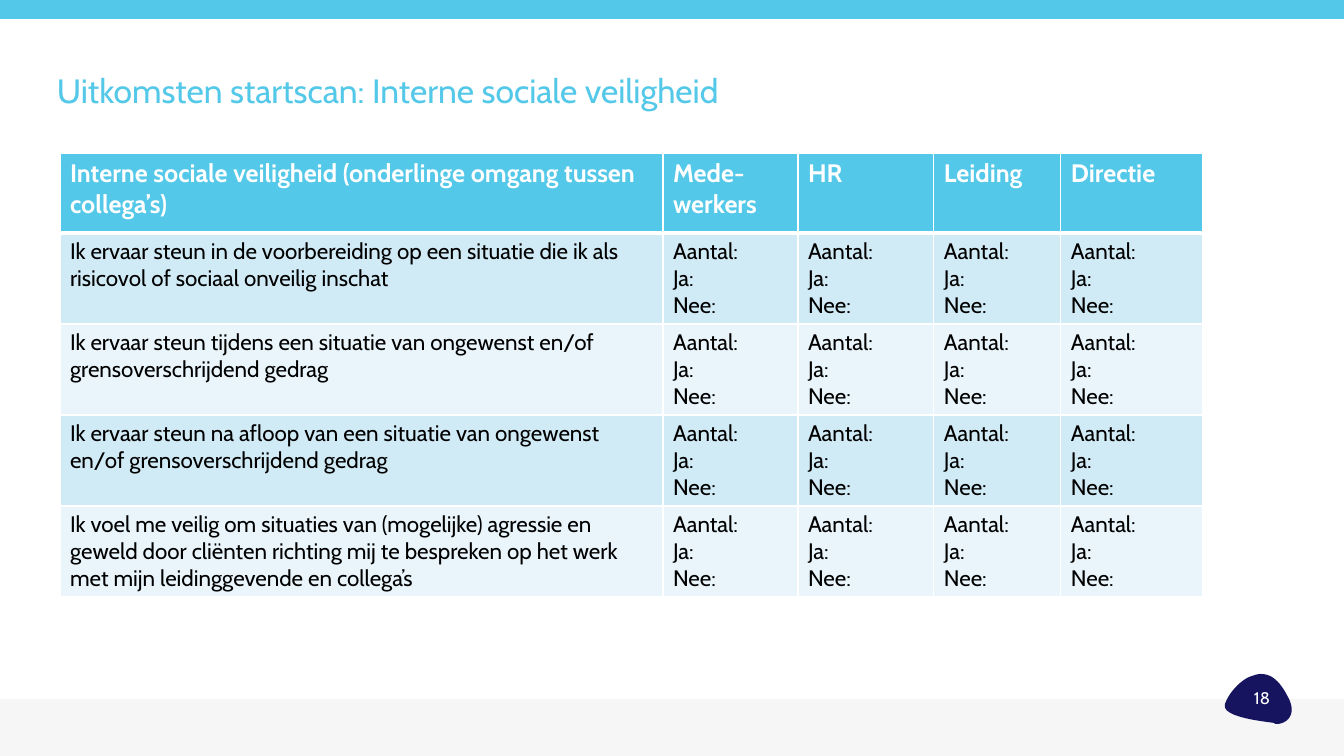
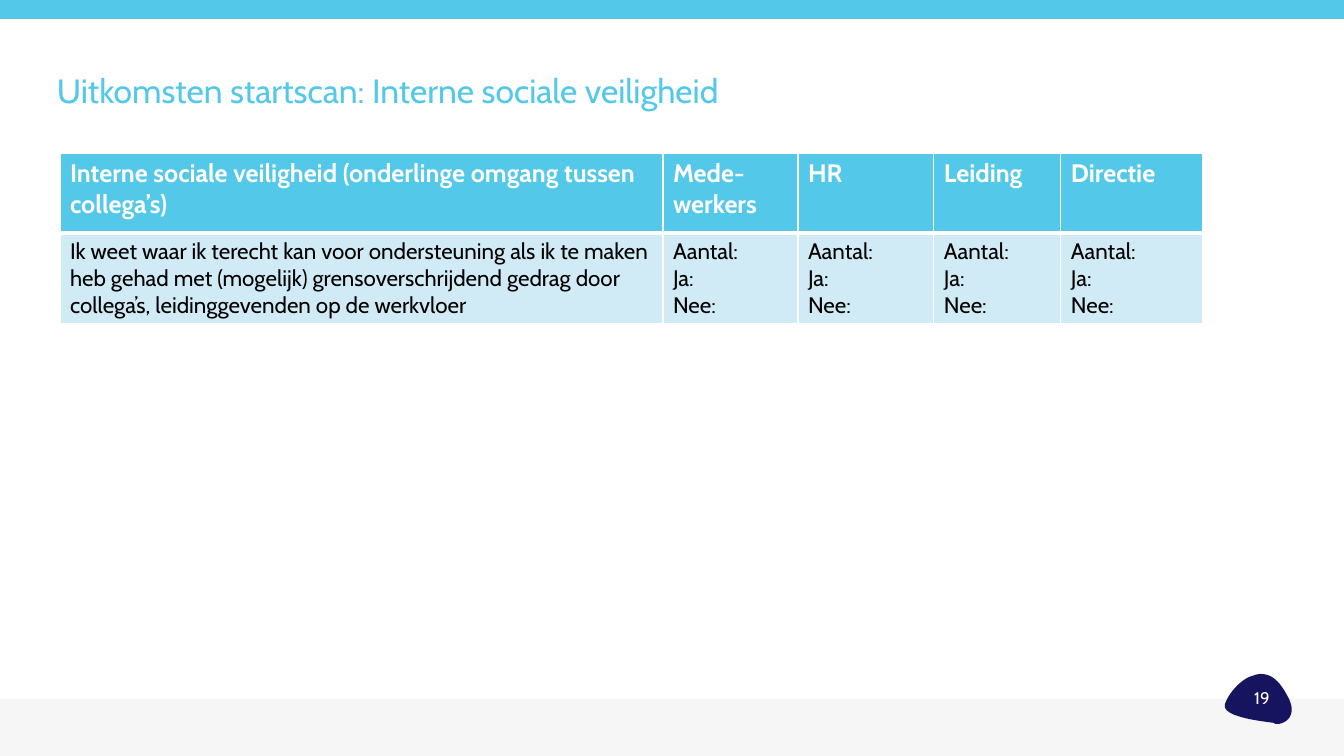
from dataclasses import dataclass

from lxml.etree import SubElement
from pptx import Presentation
from pptx.dml.color import RGBColor
from pptx.enum.shapes import MSO_SHAPE
from pptx.enum.text import MSO_ANCHOR, PP_ALIGN
from pptx.oxml.ns import qn
from pptx.util import Emu, Pt

SLIDE_W, SLIDE_H = 1344, 756
SCALE = 12192000 / SLIDE_W  # EMU per px


@dataclass(frozen=True)
class Theme:
    font: str = "Cabin"
    sky: str = "54C8E8"
    navy: str = "16145F"
    grey: str = "F4F4F4"
    white: str = "FFFFFF"
    black: str = "000000"
    bands: tuple[str, str] = ("D1EBF6", "E9F5FB")
    title_size: int = 24
    head_size: int = 18
    body_size: int = 16
    number_size: int = 12
    thin: int = 1
    thick: int = 3


@dataclass(frozen=True)
class Box:
    x: int
    y: int
    w: int
    h: int

    def emu(self) -> tuple[Emu, ...]:
        return tuple(px(v) for v in (self.x, self.y, self.w, self.h))


@dataclass(frozen=True)
class ResultSlide:
    number: int
    statements: tuple[str, ...]


THEME = Theme()
TITLE = "Uitkomsten startscan: Interne sociale veiligheid"
HEADINGS = (
    "Interne sociale veiligheid (onderlinge omgang tussen collega’s)",
    "Mede-\nwerkers", "HR", "Leiding", "Directie",
)
ANSWERS = "Aantal:\nJa:\nNee:"
COL_WIDTHS = (603, 135, 136, 127, 142)
HEAD_H, ROW_H = 80, 91
TABLE_X, TABLE_Y = 60, 153

TOP_BAND = Box(0, 0, SLIDE_W, 19)
FOOTER_BAND = Box(0, 699, SLIDE_W, 57)
TITLE_BOX = Box(57, 52, 1227, 82)
NUMBER_BOX = Box(1238, 677, 48, 41)

# Badge outline: start point, then two control points and an end per curve
BADGE_START = (1261, 674)
BADGE_CURVES = (
    ((1258, 674), (1255, 675), (1252, 676)),
    ((1244, 678), (1230, 690), (1225, 704)),
    ((1220, 718), (1270, 722), (1274, 723)),
    ((1275, 724), (1276, 724), (1277, 724)),
    ((1286, 724), (1299, 715), (1287, 695)),
    ((1278, 678), (1269, 674), BADGE_START),
)
CURVE_STEPS = 12

SLIDES = (
    ResultSlide(18, (
        "Ik ervaar steun in de voorbereiding op een situatie die ik als "
        "risicovol of sociaal onveilig inschat",
        "Ik ervaar steun tijdens een situatie van ongewenst en/of "
        "grensoverschrijdend gedrag",
        "Ik ervaar steun na afloop van een situatie van ongewenst en/of "
        "grensoverschrijdend gedrag",
        "Ik voel me veilig om situaties van (mogelijke) agressie en geweld "
        "door cliënten richting mij te bespreken op het werk met mijn "
        "leidinggevende en collega’s",
    )),
    ResultSlide(19, (
        "Ik weet waar ik terecht kan voor ondersteuning als ik te maken heb "
        "gehad met (mogelijk) grensoverschrijdend gedrag door collega’s, "
        "leidinggevenden op de werkvloer",
    )),
)


def px(value: float) -> Emu:
    return Emu(round(value * SCALE))


def set_text(tf, text: str, size: int, color: str, bold: bool = False) -> None:
    tf.text = text
    for p in tf.paragraphs:
        for r in p.runs:
            r.font.name = THEME.font
            r.font.size = Pt(size)
            r.font.bold = bold
            r.font.color.rgb = RGBColor.from_string(color)


def paint(sp, color: str) -> None:
    sp.shadow.inherit = False
    sp.fill.solid()
    sp.fill.fore_color.rgb = RGBColor.from_string(color)
    sp.line.fill.background()


def add_band(s, box: Box, color: str, opacity: int = 100) -> None:
    sp = s.shapes.add_shape(MSO_SHAPE.RECTANGLE, *box.emu())
    paint(sp, color)
    if opacity < 100:
        clr = sp.fill._xPr.find(".//" + qn("a:srgbClr"))
        SubElement(clr, qn("a:alpha"), val=str(opacity * 1000))


def add_badge(s) -> None:
    points, start = [], BADGE_START
    for c1, c2, end in BADGE_CURVES:
        for step in range(1, CURVE_STEPS + 1):
            t = step / CURVE_STEPS
            u = 1 - t
            points.append(tuple(
                px(u**3 * a + 3 * u * u * t * b + 3 * u * t * t * c + t**3 * d)
                for a, b, c, d in zip(start, c1, c2, end)
            ))
        start = end
    builder = s.shapes.build_freeform(*(px(v) for v in BADGE_START))
    builder.add_line_segments(points, close=True)
    paint(builder.convert_to_shape(), THEME.navy)


def add_label(s, box: Box, text: str, size: int, color: str):
    tf = s.shapes.add_textbox(*box.emu()).text_frame
    tf.word_wrap = True
    tf.vertical_anchor = MSO_ANCHOR.MIDDLE
    tf.margin_left = tf.margin_right = tf.margin_top = tf.margin_bottom = 0
    set_text(tf, text, size, color)
    return tf.paragraphs[0]


def set_borders(cell, top: int, bottom: int) -> None:
    tc_pr = cell._tc.get_or_add_tcPr()
    widths = {"lnL": THEME.thin, "lnR": THEME.thin, "lnT": top, "lnB": bottom}
    for side, width in widths.items():
        ln = SubElement(tc_pr, qn(f"a:{side}"), w=str(Pt(width)))
        fill = SubElement(ln, qn("a:solidFill"))
        SubElement(fill, qn("a:srgbClr"), val=THEME.white)


def add_results(s, statements: tuple[str, ...]) -> None:
    rows = [HEADINGS]
    rows += [(text,) + (ANSWERS,) * (len(HEADINGS) - 1) for text in statements]
    heights = [HEAD_H] + [ROW_H] * len(statements)
    box = Box(TABLE_X, TABLE_Y, sum(COL_WIDTHS), sum(heights))
    table = s.shapes.add_table(len(rows), len(HEADINGS), *box.emu()).table
    table.first_row = table.horz_banding = False
    for col, width in zip(table.columns, COL_WIDTHS):
        col.width = px(width)
    for i, texts in enumerate(rows):
        table.rows[i].height = px(heights[i])
        head = i == 0
        fill = THEME.sky if head else THEME.bands[(i - 1) % 2]
        size = THEME.head_size if head else THEME.body_size
        color = THEME.white if head else THEME.black
        for j, text in enumerate(texts):
            cell = table.cell(i, j)
            set_borders(cell, top=THEME.thick if i == 1 else THEME.thin,
                        bottom=THEME.thick if head else THEME.thin)
            cell.fill.solid()
            cell.fill.fore_color.rgb = RGBColor.from_string(fill)
            set_text(cell.text_frame, text, size, color, bold=head)


def add_slide(prs, content: ResultSlide) -> None:
    s = prs.slides.add_slide(prs.slide_layouts[6])
    # Bands and page number
    add_band(s, FOOTER_BAND, THEME.grey, opacity=80)
    add_badge(s)
    add_band(s, TOP_BAND, THEME.sky)
    number = add_label(s, NUMBER_BOX, str(content.number),
                       THEME.number_size, THEME.white)
    number.alignment = PP_ALIGN.CENTER
    # Table and title
    add_results(s, content.statements)
    title = add_label(s, TITLE_BOX, TITLE, THEME.title_size, THEME.sky)
    title.line_spacing = 0.9


def main() -> None:
    prs = Presentation()
    prs.slide_width, prs.slide_height = px(SLIDE_W), px(SLIDE_H)
    for content in SLIDES:
        add_slide(prs, content)
    prs.save("out.pptx")


if __name__ == "__main__":
    main()
